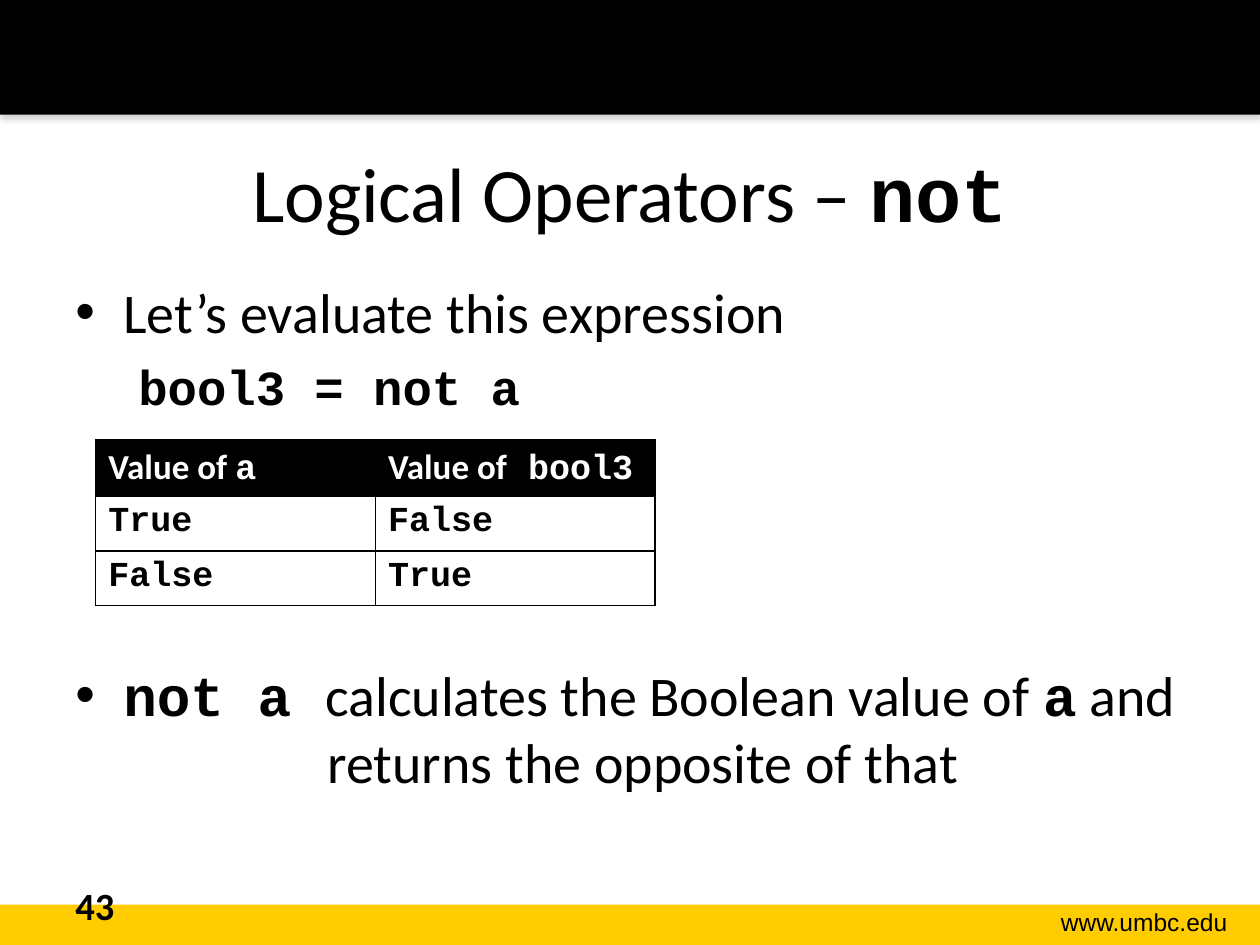
from lxml.etree import SubElement, fromstring
from pptx import Presentation
from pptx.dml.color import RGBColor
from pptx.enum.shapes import MSO_SHAPE as Shape
from pptx.enum.text import MSO_ANCHOR as Anchor, PP_ALIGN as Align
from pptx.oxml.ns import nsdecls, qn
from pptx.util import Inches, Pt


class Theme:
    black = RGBColor(0, 0, 0)
    white = RGBColor(255, 255, 255)
    gold = RGBColor(255, 204, 0)
    text, code, address = "Calibri", "Courier New", "Arial"
    title, body, expression, number, cell, footer = 44, 32, 28, 22, 20, 14


deck = Presentation()
deck.slide_width, deck.slide_height = Inches(10), Inches(7.5)
page = deck.slides.add_slide(deck.slide_layouts[6])


def area(left, top, width, height):
    """Turn percentages of the slide into a position and a size."""
    across, down = deck.slide_width / 100, deck.slide_height / 100
    return int(left * across), int(top * down), int(width * across), int(height * down)


def write(para, size, pieces, color=Theme.black):
    """Fill a paragraph with (text, font, bold) pieces; a newline breaks the line."""
    para.font.size, para.font.color.rgb = Pt(size), color
    alike = len({piece[1:] for piece in pieces}) == 1
    for text, font, bold in pieces:
        for index, line in enumerate(text.split("\n")):
            if index:
                para.add_line_break()
            span = para.add_run()
            span.text = line
            target = para.font if alike else span.font
            target.name, target.bold = font, bold


# Bars at the bottom and the top
for place, color in (((0, 95.73, 100, 4.27), Theme.gold), ((0, 0, 100, 12.13), Theme.black)):
    bar = page.shapes.add_shape(Shape.RECTANGLE, *area(*place))
    bar.shadow.inherit = False
    bar.fill.solid()
    bar.fill.fore_color.rgb = color
    bar.line.fill.background()

# Soft shadow under the top bar
effects = bar._element.spPr.find(qn("a:effectLst"))
effects.append(fromstring(
    f'<a:outerShdw {nsdecls("a")} blurRad="{Pt(3.1)}" dist="{Pt(1.8)}" dir="5400000" rotWithShape="0">'
    '<a:srgbClr val="808080"><a:alpha val="35000"/></a:srgbClr></a:outerShdw>'))

# Title, web address and page number
labels = [
    ((5, 12, 90, 16.67), Align.CENTER, Anchor.MIDDLE, Theme.title,
     [("Logical Operators – ", Theme.text, False), ("not", Theme.code, True)]),
    ((78.5, 95.33, 19.9, 4.53), Align.RIGHT, Anchor.TOP, Theme.footer,
     [("www.umbc.edu", Theme.address, False)]),
    ((5, 92.67, 23.3, 5.33), Align.LEFT, Anchor.TOP, Theme.number,
     [("43", Theme.text, True)]),
]
for place, align, anchor, size, pieces in labels:
    frame = page.shapes.add_textbox(*area(*place)).text_frame
    frame.word_wrap, frame.vertical_anchor = True, anchor
    frame.paragraphs[0].alignment = align
    write(frame.paragraphs[0], size, pieces)

# Body: the third paragraph leaves room for the table
body = page.shapes.add_textbox(*area(5, 28.67, 93.2, 60.67)).text_frame
body.word_wrap = True
points = [
    (True, 0, Theme.body, [("Let’s evaluate this expression", Theme.text, False)]),
    (False, 7, Theme.expression, [("bool3 = not a", Theme.code, True)]),
    (True, 140, Theme.body, [
        ("not a ", Theme.code, True),
        ("calculates the Boolean value of ", Theme.text, False),
        ("a", Theme.code, True),
        (" and\n\treturns the opposite of that", Theme.text, False)]),
]
for index, (bulleted, gap, size, pieces) in enumerate(points):
    para = body.add_paragraph() if index else body.paragraphs[0]
    props = para._p.get_or_add_pPr()
    props.set("marL", str(Inches(0.38 if bulleted else 0.5)))
    props.set("indent", str(Inches(-0.38 if bulleted else 0)))
    if bulleted:
        SubElement(props, qn("a:buFont"), typeface=Theme.address)
        SubElement(props, qn("a:buChar"), char="•")
        tabs = SubElement(props, qn("a:tabLst"))
        SubElement(tabs, qn("a:tab"), pos=str(Inches(2)), algn="l")
    if gap:
        para.space_before = Pt(gap)
    write(para, size, pieces)

# Truth table
rows = [
    [[("Value of ", Theme.text, True), ("a", Theme.code, True)],
     [("Value of", Theme.text, True), (" bool3", Theme.code, True)]],
    [[("True", Theme.code, True)], [("False", Theme.code, True)]],
    [[("False", Theme.code, True)], [("True", Theme.code, True)]],
]
table = page.shapes.add_table(3, 2, *area(7.6, 46.53, 44.4, 17.33)).table
for row, height in zip(table.rows, (0.45, 0.41, 0.41)):
    row.height = Inches(height)
for r, row in enumerate(rows):
    for c, pieces in enumerate(row):
        cell = table.cell(r, c)
        props = cell._tc.get_or_add_tcPr()
        for side in ("lnL", "lnR", "lnT", "lnB"):
            border = SubElement(props, qn(f"a:{side}"), w=str(Pt(1)))
            fill = SubElement(border, qn("a:solidFill"))
            SubElement(fill, qn("a:srgbClr"), val=str(Theme.black))
        cell.fill.solid()
        cell.fill.fore_color.rgb = Theme.white if r else Theme.black
        write(cell.text_frame.paragraphs[0], Theme.cell, pieces,
              Theme.black if r else Theme.white)

deck.save("out.pptx")
